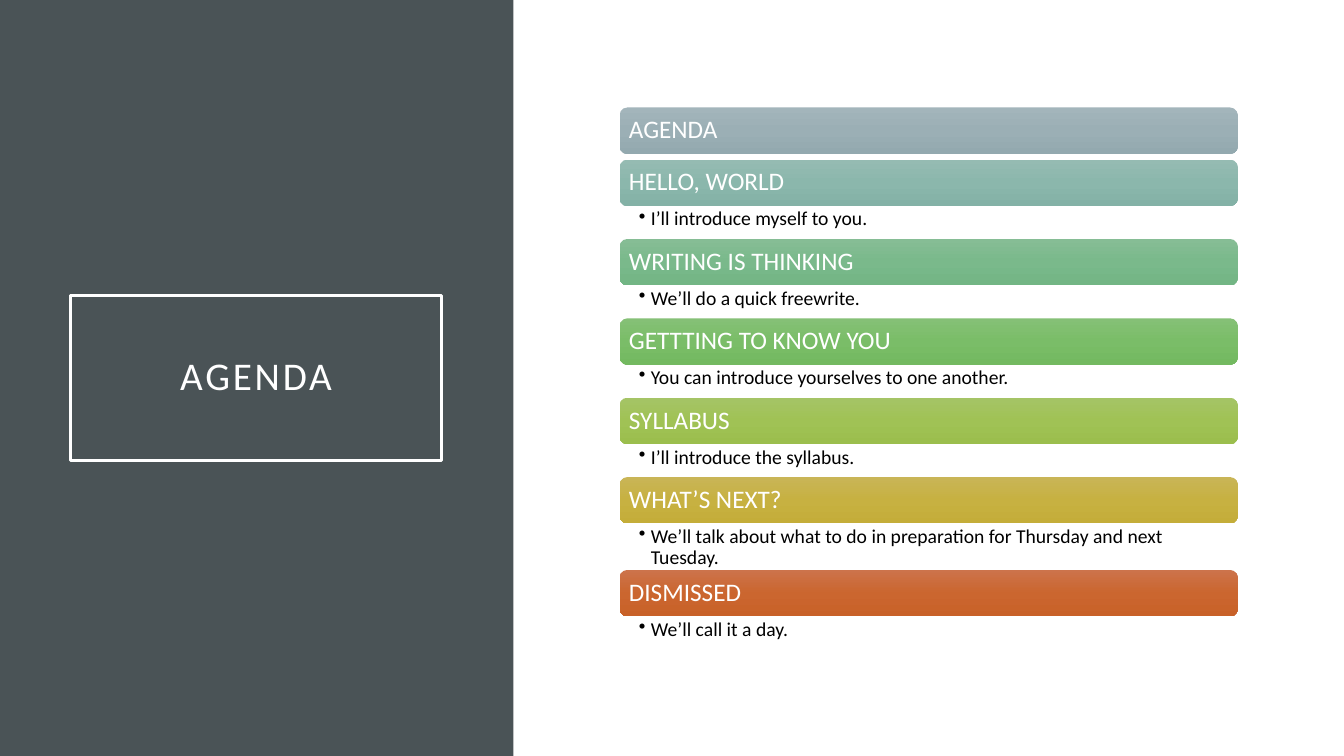
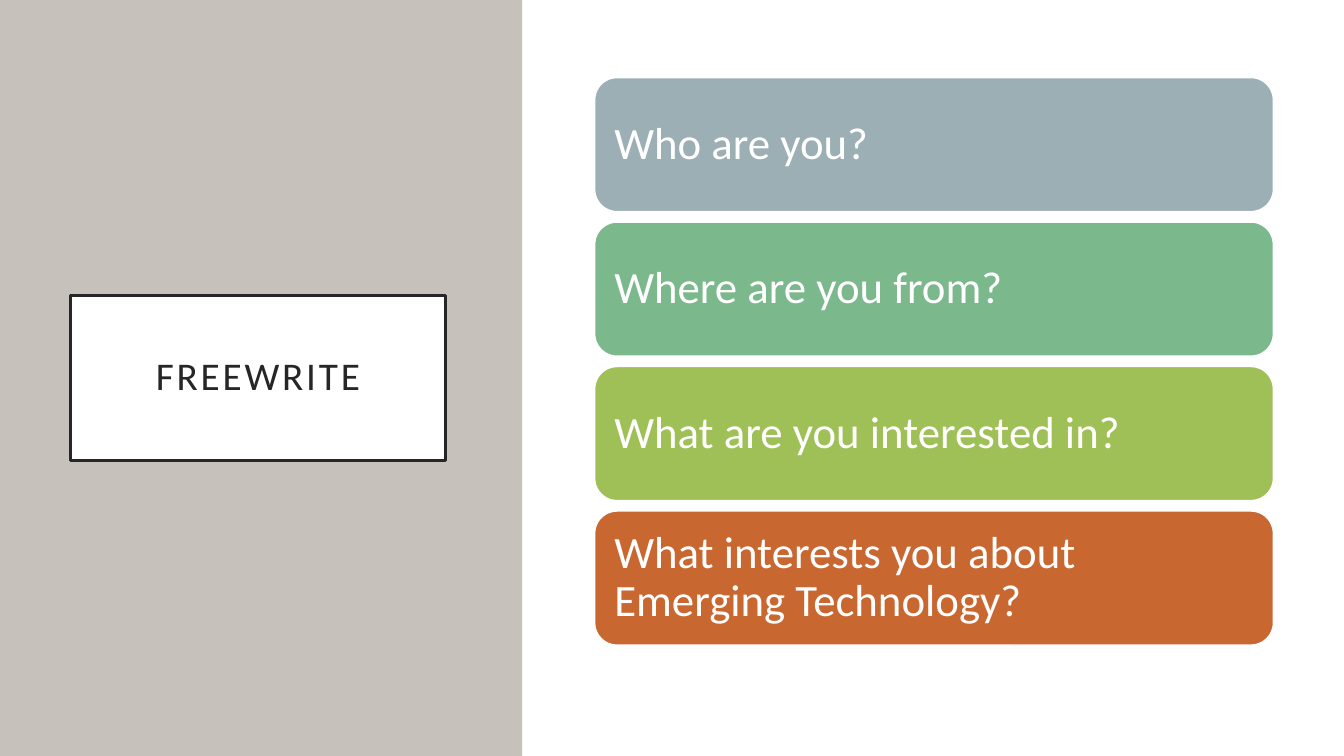
"""Build the agenda and freewrite slides: a titled side panel beside a stack of coloured bars."""
from copy import deepcopy
from dataclasses import dataclass

from pptx import Presentation
from pptx.dml.color import RGBColor
from pptx.enum.shapes import MSO_SHAPE
from pptx.enum.text import MSO_ANCHOR, MSO_AUTO_SIZE, PP_ALIGN
from pptx.oxml.ns import qn
from pptx.oxml.xmlchemy import OxmlElement
from pptx.util import Inches, Pt

RECT, ROUNDED = MSO_SHAPE.RECTANGLE, MSO_SHAPE.ROUNDED_RECTANGLE
TOP, MIDDLE = MSO_ANCHOR.TOP, MSO_ANCHOR.MIDDLE
LEFT, CENTER = PP_ALIGN.LEFT, PP_ALIGN.CENTER
NO_AUTOFIT = MSO_AUTO_SIZE.NONE

SLIDE_W, SLIDE_H = Inches(13.33), Inches(7.5)
TITLE_ONLY = 5
FONT = "Calibri"
WHITE, BLACK, INK = "FFFFFF", "000000", "262626"
SLATE, STONE = "4A5356", "C6C1BA"


@dataclass(frozen=True)
class Box:
    """A place given in percent of the slide's width and height."""
    left: float
    top: float
    width: float
    height: float

    def emu(self) -> tuple[int, int, int, int]:
        """Return left, top, width and height in slide units."""
        return (int(SLIDE_W * self.left / 100), int(SLIDE_H * self.top / 100),
                int(SLIDE_W * self.width / 100), int(SLIDE_H * self.height / 100))


@dataclass(frozen=True)
class Panel:
    """The side panel with its framed title."""
    title: str
    width: float
    color: str
    title_width: float
    title_ink: str
    title_fill: str | None = None


@dataclass(frozen=True)
class AgendaItem:
    """One agenda bar, its gradient and the note below it."""
    heading: str
    gradient: tuple[str, str, str]
    note: str = ""
    note_height: float = 4.36


@dataclass(frozen=True)
class Question:
    """One freewrite prompt and its colour."""
    wording: str
    color: str


AGENDA_PANEL = Panel("AGENDA", 38.2, SLATE, 27.6, WHITE)
AGENDA = (
    AgendaItem("AGENDA", ("A3B5BB", "9BAFB5", "93A9AF")),
    AgendaItem("HELLO, WORLD", ("95BBB2", "8BB7AC", "83B1A6"), "I’ll introduce myself to you."),
    AgendaItem("WRITING IS THINKING", ("86BD95", "7AB98B", "72B584"), "We’ll do a quick freewrite."),
    AgendaItem("GETTTING TO KNOW YOU", ("85C076", "7ABD68", "73B960"),
               "You can introduce yourselves to one another."),
    AgendaItem("SYLLABUS", ("A5C466", "A0C255", "9BBE4D"), "I’ll introduce the syllabus."),
    AgendaItem("WHAT’S NEXT?", ("C9B557", "C7B141", "C4AD39"),
               "We’ll talk about what to do in preparation for Thursday and next Tuesday.", 6.14),
    AgendaItem("DISMISSED", ("CC734B", "CB662F", "C86128"), "We’ll call it a day."),
)
AGENDA_BAR, AGENDA_GAP = Box(46.1, 14.22, 46, 6.14), 0.75

FREEWRITE_PANEL = Panel("FREEWRITE", 38.86, STONE, 27.9, INK, WHITE)
QUESTIONS = (
    Question("Who are you?", "9BAFB5"),
    Question("Where are you from?", "7BB88C"),
    Question("What are you interested in?", "9FC057"),
    Question("What interests you about Emerging Technology?", "C96731"),
)
QUESTION_BAR, QUESTION_GAP = Box(44.25, 10.27, 50.5, 17.73), 1.38


def rgb(color: str) -> RGBColor:
    """Turn a hex string into a colour."""
    return RGBColor.from_string(color)


def write(shape, text: str, *, size: float, color: str = WHITE,
          insets: tuple[float, float, float, float], anchor=MIDDLE, align=LEFT,
          spacing: float = 0, bullet_indent: float = 0) -> None:
    """Put one formatted paragraph into a shape; insets run left, top, right, bottom."""
    frame = shape.text_frame
    frame.word_wrap, frame.auto_size, frame.vertical_anchor = True, NO_AUTOFIT, anchor
    (frame.margin_left, frame.margin_top,
     frame.margin_right, frame.margin_bottom) = map(Inches, insets)
    paragraph = frame.paragraphs[0]
    paragraph.alignment, paragraph.line_spacing = align, 0.9
    run = paragraph.add_run()
    run.text = text
    run.font.name, run.font.size = FONT, Pt(size)
    run.font.color.rgb = rgb(color)
    if spacing:
        run.font._element.set("spc", str(int(spacing * 100)))
    if bullet_indent:
        properties = paragraph._p.get_or_add_pPr()
        properties.set("marL", str(Inches(bullet_indent)))
        properties.set("indent", str(-Inches(bullet_indent)))
        bullet = OxmlElement("a:buChar")
        bullet.set("char", "•")
        properties.append(bullet)


def add_block(slide, kind, box: Box, *colors: str, outline: str | None = None):
    """Add a shape filled with one colour or with an even downward gradient."""
    block = slide.shapes.add_shape(kind, *box.emu())
    block.shadow.inherit = False
    if len(colors) == 1:
        block.fill.solid()
        block.fill.fore_color.rgb = rgb(colors[0])
    else:
        block.fill.gradient()
        block.fill.gradient_angle = 270
        stop_list = block._element.spPr.find(".//" + qn("a:gsLst"))
        for _ in colors[2:]:
            stop_list.append(deepcopy(stop_list[-1]))
        for index, (stop, color) in enumerate(zip(block.fill.gradient_stops, colors)):
            stop.position = index / (len(colors) - 1)
            stop.color.rgb = rgb(color)
    if outline:
        block.line.color.rgb = rgb(outline)
        block.line.width = Pt(1)
    else:
        block.line.fill.background()
    return block


def add_titled_slide(deck, panel: Panel):
    """Add a slide with its side panel behind the framed title."""
    slide = deck.slides.add_slide(deck.slide_layouts[TITLE_ONLY])
    side = add_block(slide, RECT, Box(0, 0, panel.width, 100), panel.color)
    title = slide.shapes.title
    title._element.addprevious(side._element)
    title.left, title.top, title.width, title.height = Box(5.25, 39.07, panel.title_width, 21.87).emu()
    if panel.title_fill:
        title.fill.solid()
        title.fill.fore_color.rgb = rgb(panel.title_fill)
    title.line.color.rgb = rgb(panel.title_ink)
    title.line.width = Pt(2.5)
    write(title, panel.title, size=28, color=panel.title_ink, insets=(0.2,) * 4,
          align=CENTER, spacing=2)
    return slide


def build_agenda(deck) -> None:
    """Stack the agenda bars, each followed by its note or a small gap."""
    slide = add_titled_slide(deck, AGENDA_PANEL)
    left, top, width, height = AGENDA_BAR.left, AGENDA_BAR.top, AGENDA_BAR.width, AGENDA_BAR.height
    for item in AGENDA:
        bar = add_block(slide, ROUNDED, Box(left, top, width, height), *item.gradient)
        write(bar, item.heading, size=18, insets=(0.07,) * 4)
        top += height
        if item.note:
            note = slide.shapes.add_textbox(*Box(left, top, width, item.note_height).emu())
            write(note, item.note, size=14, color=BLACK, insets=(0.19, 0.03, 0.14, 0.03),
                  anchor=TOP, bullet_indent=0.12)
            top += item.note_height
        else:
            top += AGENDA_GAP


def build_freewrite(deck) -> None:
    """Stack the freewrite questions at an even pitch."""
    slide = add_titled_slide(deck, FREEWRITE_PANEL)
    first = QUESTION_BAR
    for row, question in enumerate(QUESTIONS):
        place = Box(first.left, first.top + row * (first.height + QUESTION_GAP), first.width, first.height)
        bar = add_block(slide, ROUNDED, place, question.color, outline=WHITE)
        write(bar, question.wording, size=32, insets=(0.13,) * 4)


def main() -> None:
    """Build and save the deck."""
    deck = Presentation()
    deck.slide_width, deck.slide_height = SLIDE_W, SLIDE_H
    build_agenda(deck)
    build_freewrite(deck)
    deck.save("out.pptx")


if __name__ == "__main__":
    main()
